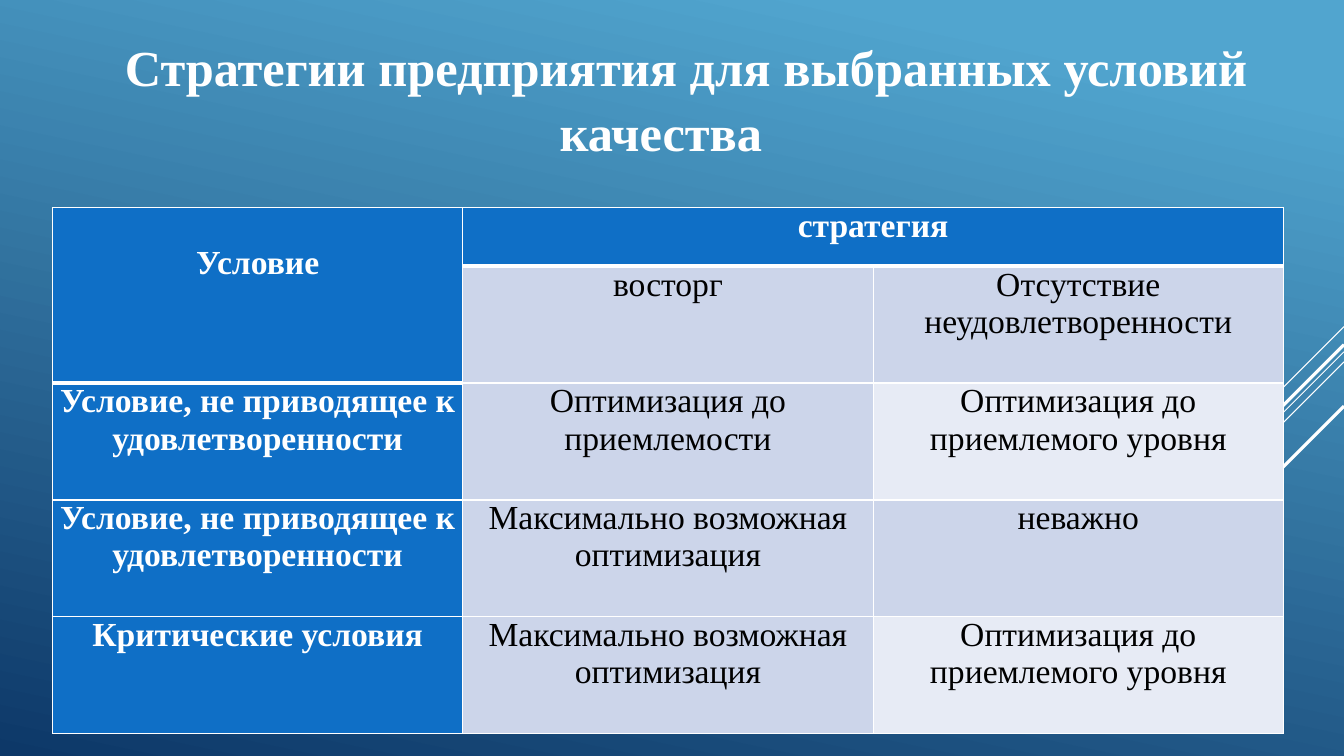
from pptx import Presentation, util as u
from pptx.dml.color import RGBColor
from pptx.enum import shapes, text
from pptx.oxml import parse_xml
from pptx.oxml.ns import nsdecls

COLORS = {
    "white": "FFFFFF", "black": "000000", "sky": "51A5CF", "navy": "0D3868",
    "header": "0F6FC6", "band": "CCD5EA", "pale": "E7EBF5",
}
STREAKS = [
    (3.24, 1.0, 0.75), (3.49, 3.26, 0.75), (3.59, 2.07, 0.75),
    (3.42, 1.91, 2.25), (4.03, 1.39, 2.25),
]
ROWS = [
    ["Условие", "стратегия", ""],
    ["", "восторг", "Отсутствие неудовлетворенности"],
    ["Условие, не приводящее к удовлетворенности",
     "Оптимизация до приемлемости", "Оптимизация до приемлемого уровня"],
    ["Условие, не приводящее к удовлетворенности",
     "Максимально возможная оптимизация", "неважно"],
    ["Критические условия",
     "Максимально возможная оптимизация", "Оптимизация до приемлемого уровня"],
]
ROW_HEIGHTS = [0.58] + [1.16] * 4


def color(name):
    return RGBColor.from_string(COLORS[name])


def apply(target, values):
    for name, value in values.items():
        setattr(target, name, value)


class SlideBuilder:
    font = "Times New Roman"
    cell_format = {
        "margin_left": u.Inches(0.07), "margin_right": u.Inches(0.07),
        "margin_top": 0, "margin_bottom": 0,
    }

    def __init__(self, deck):
        self.page = deck.slides.add_slide(deck.slide_layouts[6])

    def background(self, start, end, angle):
        fill = self.page.background.fill
        fill.gradient()
        fill.gradient_angle = 360 - angle
        for stop, (name, position) in zip(fill.gradient_stops, (start, end)):
            stop.color.rgb = color(name)
            stop.position = position

    def streak(self, top, reach, width):
        right = 13.33
        line = self.page.shapes.add_connector(
            shapes.MSO_CONNECTOR.STRAIGHT, u.Inches(right), u.Inches(top),
            u.Inches(right - reach), u.Inches(top + reach))
        line.line.color.rgb = color("white")
        line.line.width = u.Pt(width)
        line._element.spPr.append(parse_xml(f"<a:effectLst {nsdecls('a')}/>"))

    def add_text(self, frame, words, size, shade, bold, spacing=None):
        para = frame.paragraphs[0]
        apply(para, {"alignment": text.PP_ALIGN.CENTER, "line_spacing": spacing})
        span = para.add_run()
        span.text = words
        apply(span.font, {"name": self.font, "size": u.Pt(size), "bold": bold})
        span.font.color.rgb = color(shade)
        return para

    def title(self, words, left, top, width, height):
        box = self.page.shapes.add_textbox(*map(u.Inches, (left, top, width, height)))
        box.text_frame.word_wrap = True
        para = self.add_text(box.text_frame, words, 36, "white", True, 1.07)
        para._p.get_or_add_pPr().set("indent", str(u.Inches(0.5)))

    def borders(self, cell, bottom):
        properties = cell._tc.get_or_add_tcPr()
        widths = {"lnL": 1, "lnR": 1, "lnT": 1, "lnB": bottom}
        for index, (side, width) in enumerate(widths.items()):
            properties.insert(index, parse_xml(
                f'<a:{side} {nsdecls("a")} w="{u.Pt(width)}"><a:solidFill>'
                f'<a:srgbClr val="{COLORS["white"]}"/></a:solidFill></a:{side}>'))

    def table(self, rows, heights, left, top, column_width):
        count = len(rows[0])
        table = self.page.shapes.add_table(
            len(rows), count, u.Inches(left), u.Inches(top),
            u.Inches(column_width * count), u.Inches(sum(heights))).table
        for column in table.columns:
            column.width = u.Inches(column_width)
        for row, height in zip(table.rows, heights):
            row.height = u.Inches(height)
        table.cell(0, 0).merge(table.cell(1, 0))
        table.cell(0, 1).merge(table.cell(0, 2))
        for r, row in enumerate(rows):
            for c, words in enumerate(row):
                cell = table.cell(r, c)
                header = r == 0 or c == 0
                pale = c == 2 and r in (2, 4)
                apply(cell, self.cell_format)
                cell.fill.solid()
                cell.fill.fore_color.rgb = color(
                    "header" if header else "pale" if pale else "band")
                self.borders(cell, 3 if r == 0 or (r, c) == (1, 0) else 1)
                if words:
                    self.add_text(cell.text_frame, words, 24,
                                  "white" if header else "black", header)
        table.cell(0, 0).margin_top = u.Inches(0.37)


def main():
    deck = Presentation()
    apply(deck, {"slide_width": u.Inches(13.33), "slide_height": u.Inches(7.5)})
    slide = SlideBuilder(deck)
    slide.background(("sky", 0.1), ("navy", 1), 102)
    for streak in STREAKS:
        slide.streak(*streak)
    slide.title("Стратегии предприятия для выбранных условий качества",
                0.39, 0.27, 12.33, 1.31)
    slide.table(ROWS, ROW_HEIGHTS, 0.52, 2.06, 4.07)
    deck.save("out.pptx")


if __name__ == "__main__":
    main()
